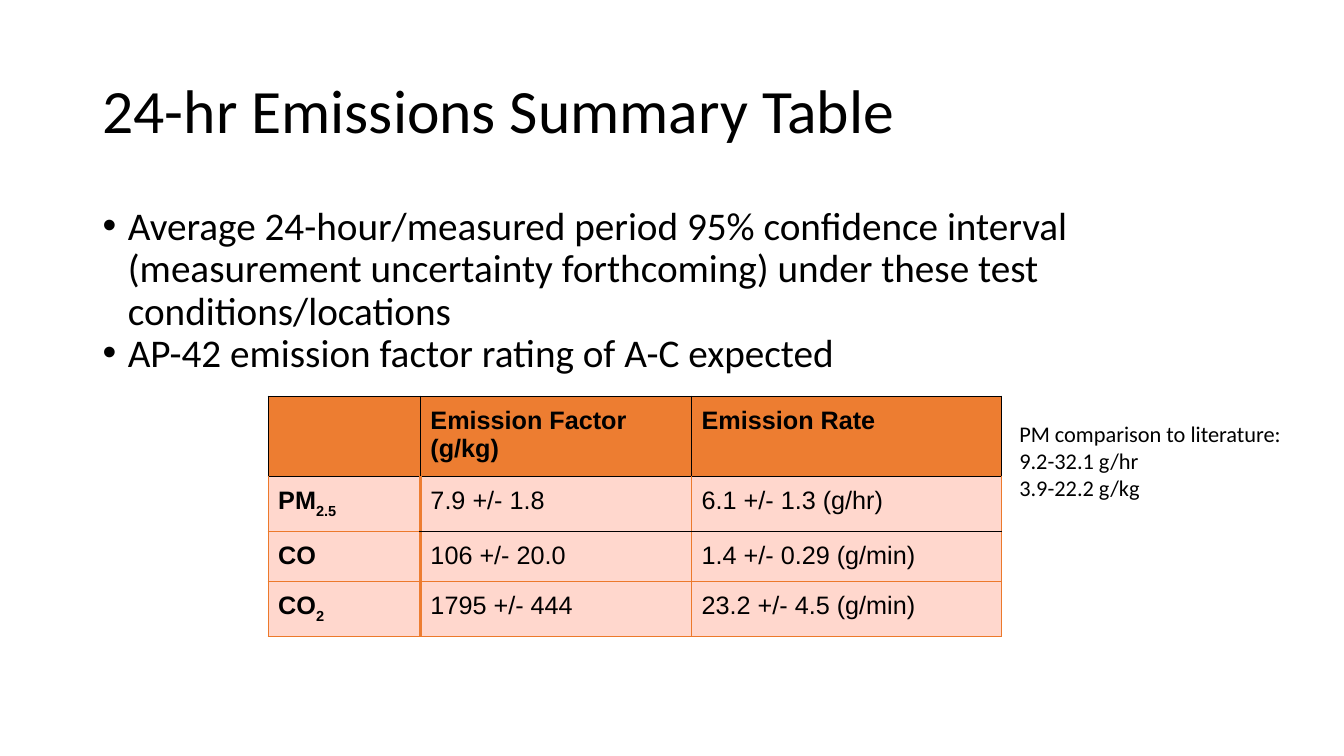
"""Build the 24-hr emissions summary slide with its table and literature note."""
from lxml import etree
from pptx import Presentation
from pptx import util as u
from pptx.dml.color import RGBColor
from pptx.enum import text
from pptx.oxml import ns

THEME = {
    "font": "Calibri", "table_font": "Arial",
    "title": 44, "body": 28, "cell": 18, "note": 16,
    "ink": "000000", "header": "ED7D31", "row": "FFD7CD", "rule": "EC792B",
}

presentation = Presentation()
presentation.slide_width = u.Inches(13.33)
presentation.slide_height = u.Inches(7.5)
slide = presentation.slides.add_slide(presentation.slide_layouts[6])
column = presentation.slide_width / 100
row = presentation.slide_height / 100


def add_text(left, top, width, height, lines, size, spacing=1.0):
    """Place lines of text in a box given in percent of the slide."""
    shape = slide.shapes.add_textbox(int(left * column), int(top * row),
                                     int(width * column), int(height * row))
    frame = shape.text_frame
    frame.word_wrap = True
    frame.text = "\n".join(lines)
    for paragraph in frame.paragraphs:
        paragraph.line_spacing = spacing
        for run in paragraph.runs:
            run.font.name = THEME["font"]
            run.font.size = u.Pt(size)
            run.font.color.rgb = RGBColor.from_string(THEME["ink"])
    return frame


def add_border(cell, position, side, color, points):
    """Draw one side of a table cell."""
    line = etree.Element(ns.qn("a:ln" + side), w=str(u.Pt(points)))
    fill = etree.SubElement(line, ns.qn("a:solidFill"))
    etree.SubElement(fill, ns.qn("a:srgbClr"), val=color)
    cell._tc.get_or_add_tcPr().insert(position, line)


title = add_text(6.9, 5.33, 86.25, 19.33, ["24-hr Emissions Summary Table"],
                 THEME["title"], 0.9)
title.vertical_anchor = text.MSO_ANCHOR.MIDDLE

body = add_text(6.9, 26.67, 86.25, 63.47, [
    "Average 24-hour/measured period 95% confidence interval (measurement "
    "uncertainty forthcoming) under these test conditions/locations",
    "AP-42 emission factor rating of A-C expected",
], THEME["body"], 0.9)
for paragraph in body.paragraphs:
    properties = paragraph._p.get_or_add_pPr()
    properties.set("marL", str(u.Inches(0.25)))
    properties.set("indent", str(-u.Inches(0.25)))
    etree.SubElement(properties, ns.qn("a:buFont"), typeface="Arial")
    etree.SubElement(properties, ns.qn("a:buChar"), char="•")

emissions = [
    [("",), ("Emission Factor (g/kg)",), ("Emission Rate",)],
    [("PM", "2.5"), ("7.9 +/- 1.8",), ("6.1 +/- 1.3 (g/hr)",)],
    [("CO",), ("106 +/- 20.0",), ("1.4 +/- 0.29 (g/min)",)],
    [("CO", "2"), ("1795 +/- 444",), ("23.2 +/- 4.5 (g/min)",)],
]
column_shares = [11.33, 20.18, 23.03]
row_shares = [10.08, 6.9, 6.45, 6.9]
frame = slide.shapes.add_table(
    len(row_shares), len(column_shares), int(19.95 * column), int(52.4 * row),
    int(sum(column_shares) * column), int(sum(row_shares) * row))
table = frame.table
table.horz_banding = False
for index, share in enumerate(column_shares):
    table.columns[index].width = int(share * column)
for index, share in enumerate(row_shares):
    table.rows[index].height = int(share * row)

black, thin, thick = (THEME["ink"], 1), (THEME["rule"], 0.75), (THEME["header"], 2)
for r, cells in enumerate(emissions):
    for c, parts in enumerate(cells):
        cell = table.cell(r, c)
        cell.margin_left = cell.margin_right = u.Inches(0.1)
        cell.margin_top = cell.margin_bottom = u.Inches(0.1)
        cell.fill.solid()
        cell.fill.fore_color.rgb = RGBColor.from_string(THEME["row" if r else "header"])
        paragraph = cell.text_frame.paragraphs[0]
        for index, part in enumerate(filter(None, parts)):
            run = paragraph.add_run()
            run.text = part
            run.font.name = THEME["table_font"]
            run.font.size = u.Pt(THEME["cell"])
            run.font.bold = r == 0 or c == 0
            run.font.color.rgb = RGBColor.from_string(THEME["ink"])
            if index:
                run._r.get_or_add_rPr().set("baseline", "-25000")
        borders = {
            "L": black if r == 0 else thick if c == 1 else thin,
            "R": black if r == 0 else thick if c == 0 else thin,
            "T": black if r < 2 or (r == 2 and c) else thin,
            "B": black if r == 0 or (r == 1 and c) else thin,
        }
        for position, (side, style) in enumerate(borders.items()):
            add_border(cell, position, side, *style)

add_text(75.1, 54.93, 30.46, 12.13,
         ["PM comparison to literature:", "9.2-32.1 g/hr", "3.9-22.2 g/kg"],
         THEME["note"])

presentation.save("out.pptx")
